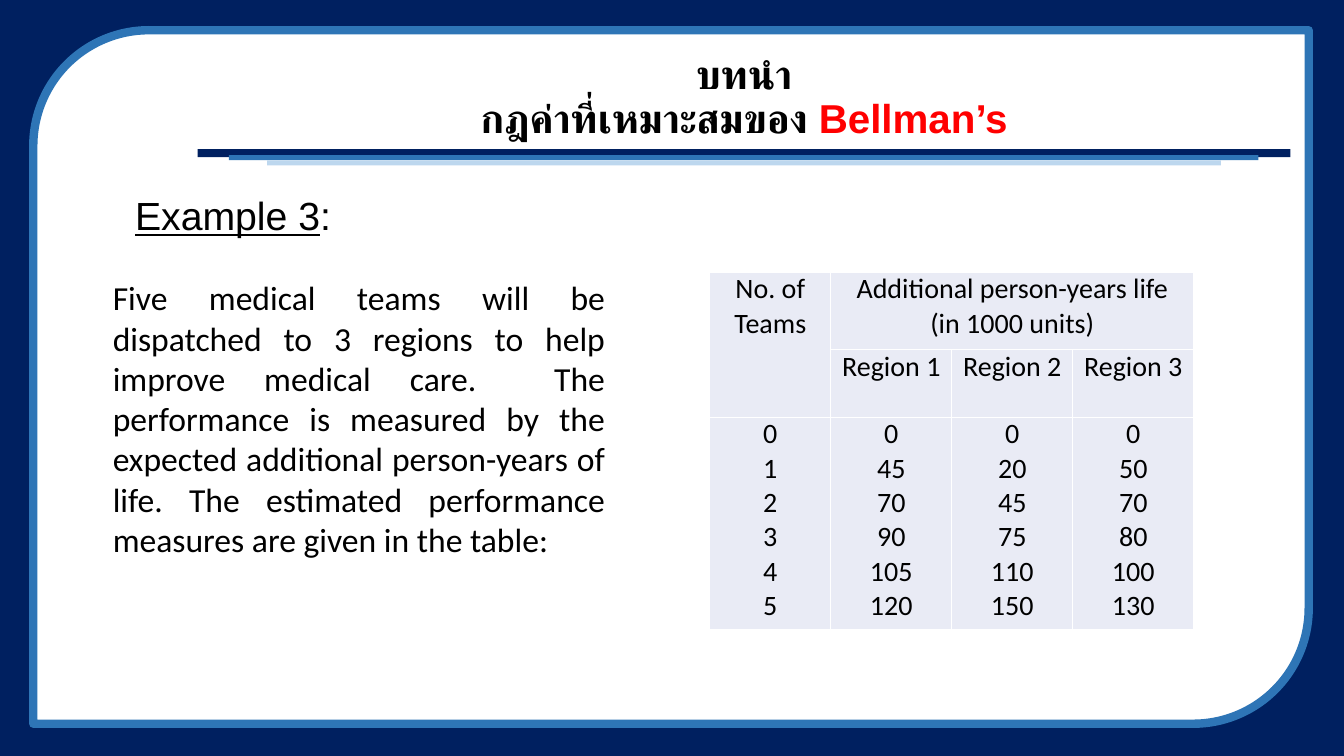
from lxml import etree
from pptx import Presentation
from pptx.dml.color import RGBColor
from pptx.enum import shapes, text
from pptx.oxml import ns
from pptx.util import Inches, Pt

NAVY, BLUE, PALE = "002060", "2E75B6", "BDD7EE"
WHITE, BLACK, RED, CELL = "FFFFFF", "000000", "FF0000", "E9EBF5"
MID = text.PP_ALIGN.CENTER
JUST = text.PP_ALIGN.JUSTIFY

STORY = ("Five medical teams will be dispatched to 3 regions to help improve "
         "medical care.  The performance is measured by the expected additional "
         "person-years of life. The estimated performance measures are given "
         "in the table:")
YEARS = {
    "Region 1": [0, 45, 70, 90, 105, 120],
    "Region 2": [0, 20, 45, 75, 110, 150],
    "Region 3": [0, 50, 70, 80, 100, 130],
}


def color(code):
    return RGBColor.from_string(code)


def place(shape, *box):
    shape.left, shape.top, shape.width, shape.height = map(Inches, box)


def panel(slide, kind, box, fill, line=None):
    shape = slide.shapes.add_shape(kind, *map(Inches, box))
    shape.shadow.inherit = False
    shape.fill.solid()
    shape.fill.fore_color.rgb = color(fill)
    if line:
        shape.line.color.rgb = color(line)
        shape.line.width = Pt(6)
    else:
        shape.line.fill.background()


def write(para, words, size=20, font="Calibri", ink=BLACK, bold=False,
          under=False, align=MID, space=1):
    """Add one formatted run; a line feed in words becomes a line break."""
    para.alignment = align
    para.line_spacing = space
    para.space_before = Pt(0)
    for num, part in enumerate(words.split("\n")):
        if num:
            para.add_line_break()
        run = para.add_run()
        run.text = part
        run.font.size = Pt(size)
        run.font.name = font
        run.font.color.rgb = color(ink)
        run.font.bold = bold
        run.font.underline = under


def edge(cell):
    """Draw a thin white line on all four sides of a cell."""
    props = cell._tc.get_or_add_tcPr()
    for num, side in enumerate(("lnL", "lnR", "lnT", "lnB")):
        line = etree.Element(ns.qn("a:" + side), w=str(Pt(1)))
        fill = etree.SubElement(line, ns.qn("a:solidFill"))
        etree.SubElement(fill, ns.qn("a:srgbClr"), val=WHITE)
        props.insert(num, line)


def fill_cell(cell, lines):
    for num, words in enumerate(lines):
        frame = cell.text_frame
        para = frame.add_paragraph() if num else frame.paragraphs[0]
        write(para, str(words))


def add_frame(slide):
    panel(slide, shapes.MSO_SHAPE.RECTANGLE, (0, 0, 13.33, 7.5), NAVY)
    panel(slide, shapes.MSO_SHAPE.ROUND_2_DIAG_RECTANGLE,
          (0.33, 0.3, 12.65, 6.88), WHITE, BLUE)
    for box, fill in (((1.96, 1.48, 10.84, 0.08), NAVY),
                      ((2.27, 1.54, 10.21, 0.05), BLUE),
                      ((2.65, 1.59, 9.46, 0.05), PALE)):
        panel(slide, shapes.MSO_SHAPE.RECTANGLE, box, fill)


def add_heads(slide):
    title, body = slide.placeholders
    place(title, 1.96, 0.49, 10.84, 0.97)
    title.text_frame.vertical_anchor = text.MSO_ANCHOR.MIDDLE
    para = title.text_frame.paragraphs[0]
    look = dict(size=28.8, font="Arial", bold=True, space=0.9)
    write(para, "บทนำ\nกฎค่าที่เหมาะสมของ ", **look)
    write(para, "Bellman’s", ink=RED, **look)

    place(body, 1.24, 1.9, 11.34, 4.71)
    para = body.text_frame.paragraphs[0]
    props = para._p.get_or_add_pPr()
    props.set("marL", "0")
    props.set("indent", "0")
    etree.SubElement(props, ns.qn("a:buNone"))
    look = dict(size=28, font="Arial", align=JUST, space=0.9)
    write(para, "Example 3", under=True, **look)
    write(para, ": ", **look)


def add_story(slide):
    box = slide.shapes.add_textbox(*map(Inches, (1.02, 2.7, 5.08, 3.23)))
    box.text_frame.word_wrap = True
    write(box.text_frame.paragraphs[0], STORY, size=24, align=JUST)


def add_years(slide):
    area = map(Inches, (7.04, 2.7, 4.8, 3.55))
    table = slide.shapes.add_table(3, 4, *area).table
    table.first_row = table.horz_banding = False
    for row, high in zip(table.rows, (0.77, 0.67, 2.11)):
        row.height = Inches(high)
    for cell in table.iter_cells():
        cell.margin_left = cell.margin_right = Inches(0.07)
        cell.margin_top = cell.margin_bottom = 0
        cell.fill.solid()
        cell.fill.fore_color.rgb = color(CELL)
        edge(cell)
    table.cell(0, 0).merge(table.cell(1, 0))
    table.cell(0, 1).merge(table.cell(0, 3))
    fill_cell(table.cell(0, 0), ["No. of Teams"])
    fill_cell(table.cell(0, 1),
              ["Additional person-years life", "(in 1000 units)"])
    fill_cell(table.cell(2, 0), range(6))
    for col, (name, gains) in enumerate(YEARS.items(), 1):
        fill_cell(table.cell(1, col), [name])
        fill_cell(table.cell(2, col), gains)


def main():
    deck = Presentation()
    deck.slide_width, deck.slide_height = Inches(13.33), Inches(7.5)
    slide = deck.slides.add_slide(deck.slide_layouts[1])
    add_frame(slide)
    # Bring the placeholders in front of the frame.
    for holder in list(slide.placeholders):
        slide.shapes._spTree.append(holder._element)
    add_heads(slide)
    add_story(slide)
    add_years(slide)
    deck.save("out.pptx")


if __name__ == "__main__":
    main()
